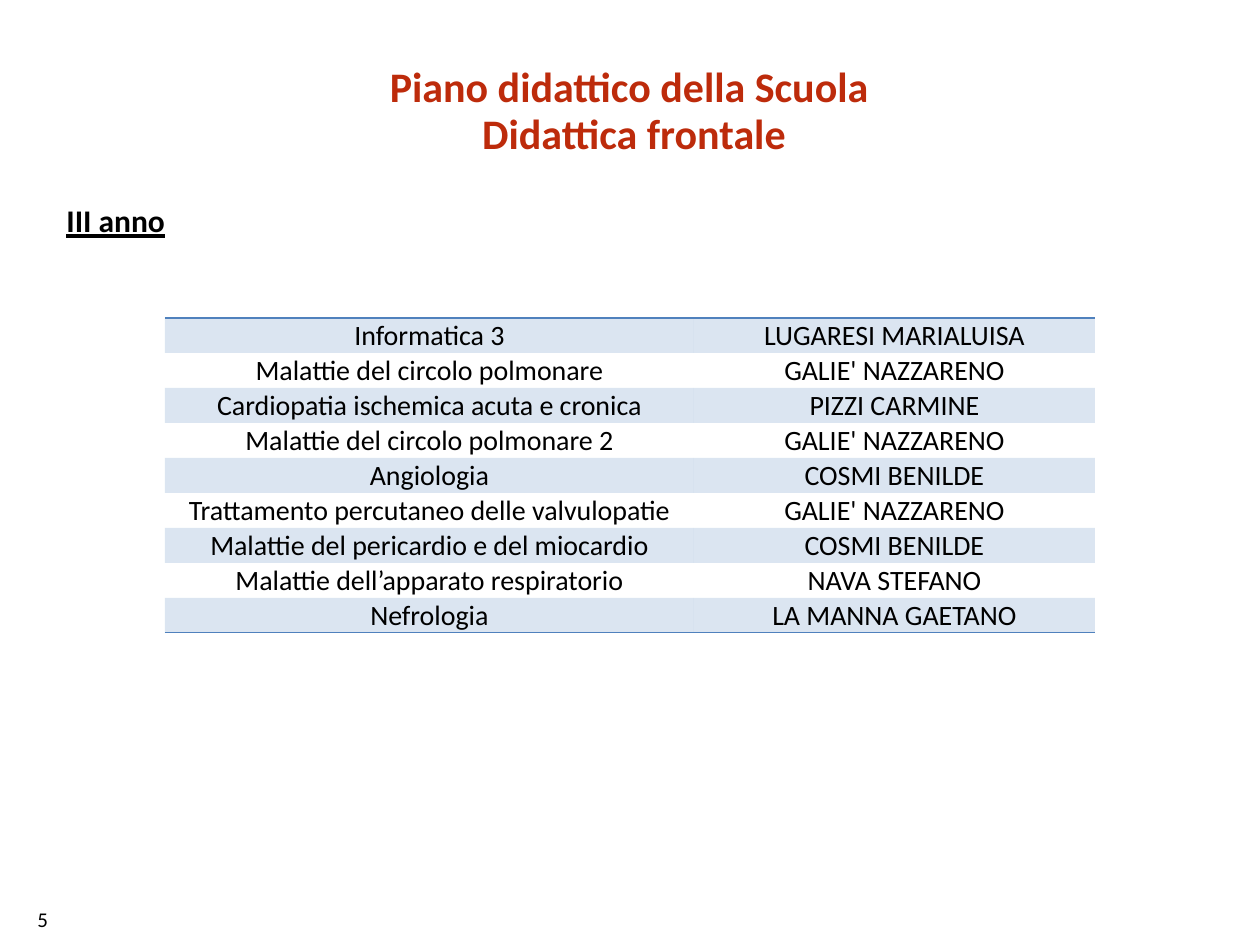
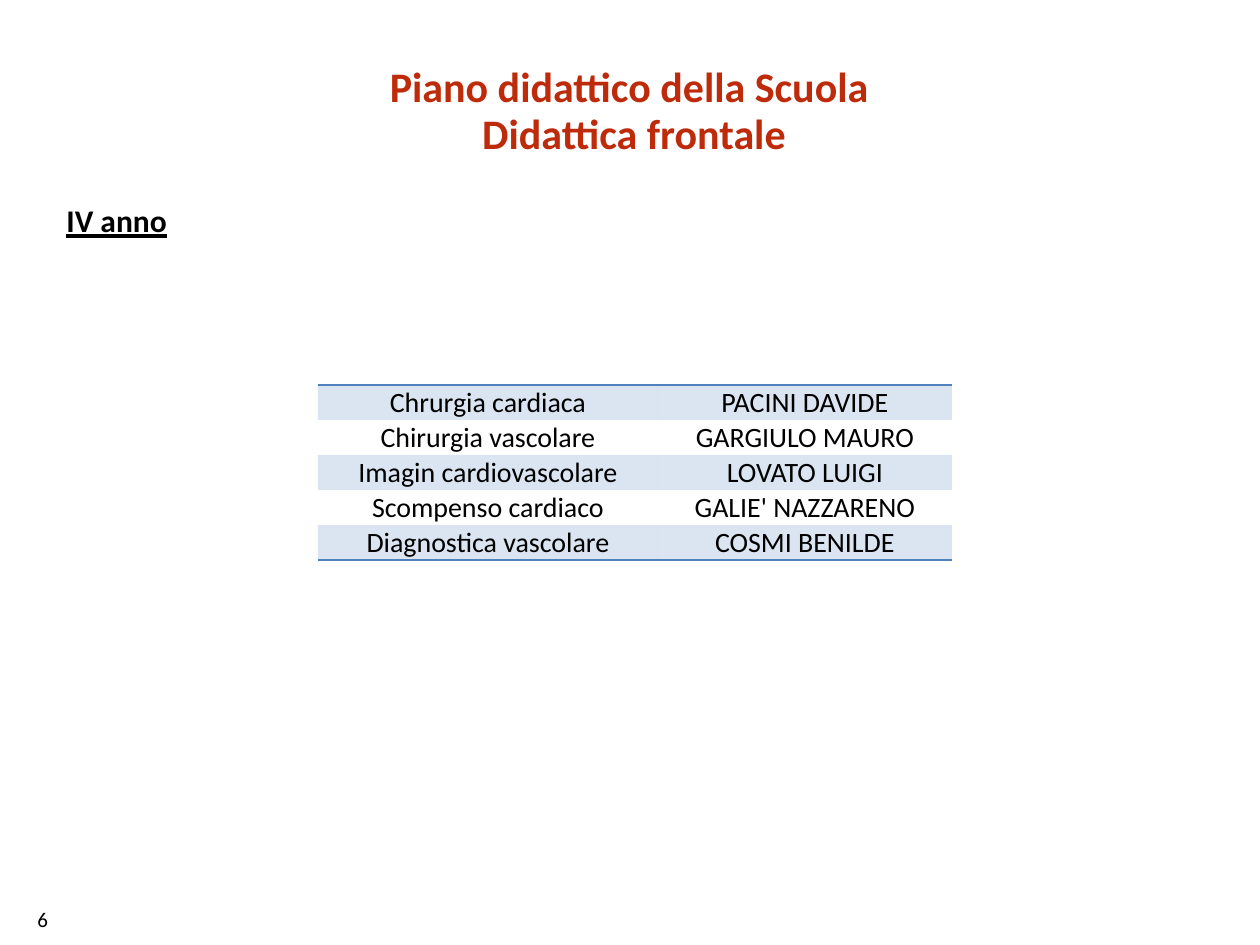
from lxml import etree
from pptx import Presentation
from pptx.dml.color import RGBColor
from pptx.enum.text import MSO_ANCHOR, PP_ALIGN
from pptx.oxml.ns import qn
from pptx.util import Pt

EMU_PER_PX = 914400 / 126
LEFT, CENTER = PP_ALIGN.LEFT, PP_ALIGN.CENTER
BOTTOM = MSO_ANCHOR.BOTTOM
NO_STYLE_NO_GRID = "{2D5ABB26-0587-4C30-8999-92F81FD0307C}"

TITLE_LINES = ["Piano didattico della Scuola ", "Didattica frontale"]
THIRD_YEAR = [
    ("Informatica 3", "LUGARESI MARIALUISA"),
    ("Malattie del circolo polmonare", "GALIE' NAZZARENO"),
    ("Cardiopatia ischemica acuta e cronica", "PIZZI CARMINE"),
    ("Malattie del circolo polmonare 2", "GALIE' NAZZARENO"),
    ("Angiologia", "COSMI BENILDE"),
    ("Trattamento percutaneo delle valvulopatie", "GALIE' NAZZARENO"),
    ("Malattie del pericardio e del miocardio", "COSMI BENILDE"),
    ("Malattie dell’apparato respiratorio", "NAVA STEFANO"),
    ("Nefrologia", "LA MANNA GAETANO"),
]
FOURTH_YEAR = [
    ("Chrurgia cardiaca", "PACINI DAVIDE"),
    ("Chirurgia vascolare", "GARGIULO MAURO"),
    ("Imagin cardiovascolare", "LOVATO LUIGI"),
    ("Scompenso cardiaco", "GALIE' NAZZARENO"),
    ("Diagnostica vascolare", "COSMI BENILDE"),
]


def px(length):
    return round(length * EMU_PER_PX)


def color(hex_code):
    return RGBColor.from_string(hex_code)


class Deck:
    FONT = "Calibri"
    TEXT = "000000"
    TITLE = "BD2B0B"
    ACCENT = "4F81BD"
    BAND_OPACITY = 20

    def __init__(self):
        self.presentation = Presentation()
        self.presentation.slide_width = px(1260)
        self.presentation.slide_height = px(945)
        self.slide = None

    def add_slide(self):
        blank = self.presentation.slide_layouts[6]
        self.slide = self.presentation.slides.add_slide(blank)

    def styled_run(self, paragraph, text, size, hex_code=TEXT, align=LEFT,
                   bold=False, underline=False):
        paragraph.alignment = align
        run = paragraph.add_run()
        run.text = text
        run.font.name = self.FONT
        run.font.size = Pt(size)
        run.font.bold = bold
        run.font.underline = underline
        run.font.color.rgb = color(hex_code)

    def text_frame(self, left, top, width, height):
        box = self.slide.shapes.add_textbox(px(left), px(top), px(width), px(height))
        box.text_frame.word_wrap = True
        return box.text_frame

    def title(self, lines):
        frame = self.text_frame(54, 66, 1160, 89)
        for index, line in enumerate(lines):
            paragraph = frame.add_paragraph() if index else frame.paragraphs[0]
            paragraph.line_spacing = Pt(22)
            if index:
                paragraph.space_before = Pt(4.8)
            self.styled_run(paragraph, line, 24, self.TITLE, CENTER, bold=True)

    def year_heading(self, text):
        frame = self.text_frame(54, 195, 1160, 694)
        self.styled_run(frame.paragraphs[0], text, 18, bold=True, underline=True)

    def page_number(self, number):
        frame = self.text_frame(25, 900, 110, 38)
        self.styled_run(frame.paragraphs[0], str(number), 12)

    def course_table(self, left, top, column_widths, courses):
        row_height = 35
        table = self.slide.shapes.add_table(
            len(courses), len(column_widths), px(left), px(top),
            px(sum(column_widths)), px(row_height * len(courses))).table
        table.first_row = table.horz_banding = False
        table._tbl.tblPr.find(qn("a:tableStyleId")).text = NO_STYLE_NO_GRID
        for column, width in zip(table.columns, column_widths):
            column.width = px(width)
        for row_index, course in enumerate(courses):
            table.rows[row_index].height = px(row_height)
            for column_index, text in enumerate(course):
                cell = table.cell(row_index, column_index)
                cell.margin_left = cell.margin_right = cell.margin_top = px(1)
                cell.margin_bottom = 0
                cell.vertical_anchor = BOTTOM
                self.styled_run(cell.text_frame.paragraphs[0], text, 16, align=CENTER)
                self.band(cell, row_index % 2 == 0)
                if row_index == 0:
                    self.border(cell, "a:lnT")
                if row_index == len(courses) - 1:
                    self.border(cell, "a:lnB")

    def band(self, cell, tinted):
        if not tinted:
            cell.fill.background()
            return
        cell.fill.solid()
        cell.fill.fore_color.rgb = color(self.ACCENT)
        tint = cell._tc.tcPr.find(".//" + qn("a:srgbClr"))
        etree.SubElement(tint, qn("a:alpha"), val=str(self.BAND_OPACITY * 1000))

    def border(self, cell, edge):
        line = etree.Element(qn(edge), w=str(Pt(1)))
        fill = etree.SubElement(line, qn("a:solidFill"))
        etree.SubElement(fill, qn("a:srgbClr"), val=self.ACCENT)
        cell._tc.tcPr.insert(0, line)

    def year_slide(self, number, heading, left, top, column_widths, courses):
        self.add_slide()
        self.page_number(number)
        self.title(TITLE_LINES)
        self.year_heading(heading)
        self.course_table(left, top, column_widths, courses)


def main():
    deck = Deck()
    deck.year_slide(5, "III anno", 165, 318, (529, 401), THIRD_YEAR)
    deck.year_slide(6, "IV anno", 318, 385, (340, 294), FOURTH_YEAR)
    deck.presentation.save("out.pptx")


if __name__ == "__main__":
    main()
